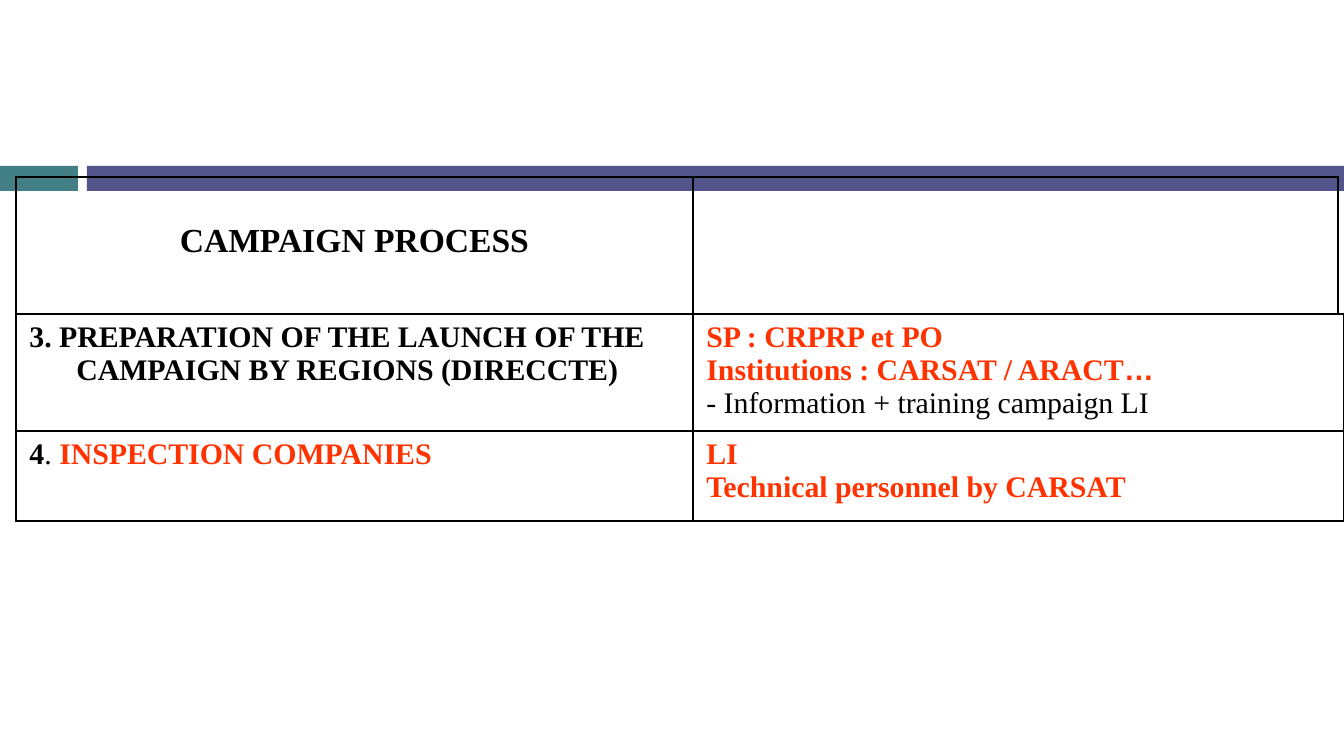
from pptx import Presentation
from pptx.dml.color import RGBColor as Rgb
from pptx.enum.shapes import MSO_SHAPE as Kind
from pptx.enum.text import PP_ALIGN as Align
from pptx.oxml.ns import qn
from pptx.util import Pt
from lxml.etree import SubElement as Sub

SCALE = 914400 / 134.4
HUE = {"teal": "438086", "violet": "53548A", "ink": "000000", "red": "FF3300"}
BASE = {"name": "Times New Roman", "size": Pt(16), "bold": True}
TITLE = {"size": Pt(18)}
PLAIN = {"bold": False}
ARIAL = {"name": "Arial"}
LEFT, TOP, HEAD = 16, 177, 137
WIDE = 677
INDENT = 47

TITLES = [[[[("CAMPAIGN PROCESS", "ink", TITLE)]], []]]
STEPS = [
    [
        [[("3. PREPARATION OF THE LAUNCH OF THE CAMPAIGN BY REGIONS (DIRECCTE)", "ink", {})]],
        [
            [("SP : CRPRP et PO", "red", {})],
            [("Institutions : CARSAT / ARACT", "red", {}), ("…", "red", ARIAL)],
            [("- Information + training campaign LI", "ink", PLAIN)],
        ],
    ],
    [
        [[("4", "ink", {}), (". ", "ink", PLAIN), ("INSPECTION COMPANIES", "red", {})]],
        [[("LI", "red", {})], [("Technical personnel by CARSAT", "red", {})]],
    ],
]


def px(n):
    return round(n * SCALE)


def add_bar(slide, x, y, w, h, hue):
    bar = slide.shapes.add_shape(Kind.RECTANGLE, px(x), px(y), px(w), px(h))
    bar.shadow.inherit = False
    bar.fill.solid()
    bar.fill.fore_color.rgb = Rgb.from_string(HUE[hue])
    bar.line.fill.background()


def add_run(para, text, hue, extra):
    run = para.add_run()
    run.text = text
    for key, value in {**BASE, **extra}.items():
        setattr(run.font, key, value)
    run.font.color.rgb = Rgb.from_string(HUE[hue])


def set_lines(cell):
    props = cell._tc.get_or_add_tcPr()
    for i, side in enumerate(("lnL", "lnR", "lnT", "lnB")):
        line = props.makeelement(qn("a:" + side), {"w": str(Pt(1))})
        props.insert(i, line)
        fill = Sub(line, qn("a:solidFill"))
        Sub(fill, qn("a:srgbClr"), val=HUE["ink"])


def fill_cell(cell, paras, center):
    cell.fill.background()
    set_lines(cell)
    frame = cell.text_frame
    for i, runs in enumerate(paras):
        para = frame.add_paragraph() if i else frame.paragraphs[0]
        if center:
            para.alignment = Align.CENTER
        else:
            props = para._p.get_or_add_pPr()
            props.set("marL", str(px(INDENT)))
            props.set("indent", str(-px(INDENT)))
        for run in runs:
            add_run(para, *run)


def add_grid(slide, y, cols, rows, data, center=False):
    grid = slide.shapes.add_table(
        len(rows), len(cols), px(LEFT), px(y), px(sum(cols)), px(sum(rows))
    ).table
    grid.first_row = grid.horz_banding = False
    for col, w in zip(grid.columns, cols):
        col.width = px(w)
    for row, h, cells in zip(grid.rows, rows, data):
        row.height = px(h)
        for cell, paras in zip(row.cells, cells):
            fill_cell(cell, paras, center)
    return grid


def main():
    deck = Presentation()
    deck.slide_width, deck.slide_height = px(1344), px(756)
    slide = deck.slides.add_slide(deck.slide_layouts[6])
    add_bar(slide, 0, 166, 78, 25, "teal")
    add_bar(slide, 87, 166, 1257, 25, "violet")
    add_grid(slide, TOP + HEAD, [WIDE, 651], [117, 90], STEPS)
    head = add_grid(slide, TOP, [WIDE, 645], [HEAD], TITLES, center=True)
    head.cell(0, 0).margin_top = px(46)
    deck.save("out.pptx")


if __name__ == "__main__":
    main()
